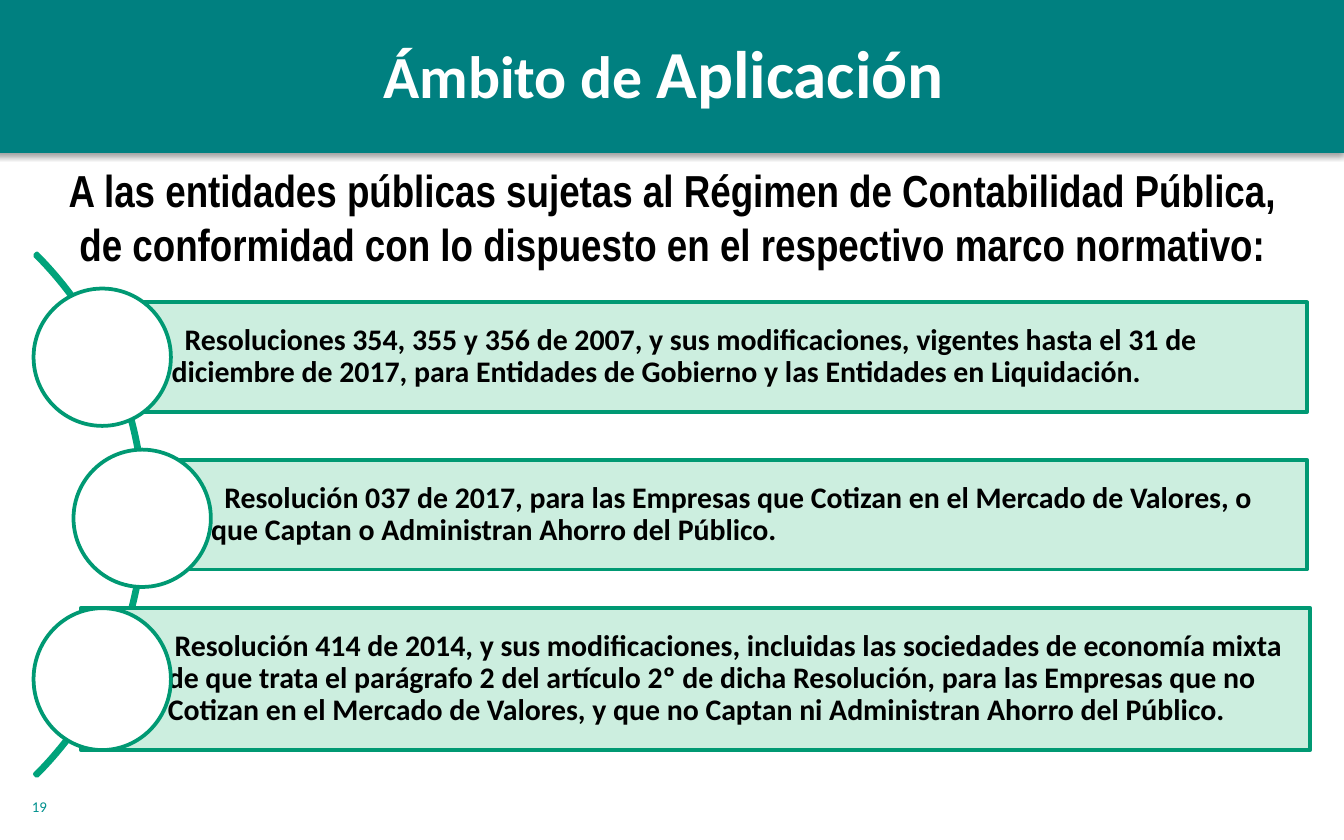
from lxml import etree
from pptx import Presentation
from pptx.dml.color import RGBColor
from pptx.enum.shapes import MSO_SHAPE
from pptx.enum.text import MSO_ANCHOR, PP_ALIGN
from pptx.oxml import parse_xml
from pptx.util import Pt

COLORS = {
    "header": "008080", "number": "00918E", "arc": "00A37B", "outline": "009973",
    "bar": "CCEEDF", "white": "FFFFFF", "black": "000000",
}
A_NS = "http://schemas.openxmlformats.org/drawingml/2006/main"

deck = Presentation()
deck.slide_width, deck.slide_height = Pt(720), Pt(450)
slide = deck.slides.add_slide(deck.slide_layouts[6])


def add_figure(preset, box, fill=None, line=None):
    """Add a shadowless preset shape; box is left, top, width, height in points."""
    figure = slide.shapes.add_shape(preset, *[Pt(length) for length in box])
    figure.shadow.inherit = False
    if fill:
        figure.fill.solid()
        figure.fill.fore_color.rgb = RGBColor.from_string(COLORS[fill])
    else:
        figure.fill.background()
    if line:
        figure.line.color.rgb = RGBColor.from_string(COLORS[line])
        figure.line.width = Pt(2)
    else:
        figure.line.fill.background()
    return figure


def write(frame, runs, font, color, bold=True, align=PP_ALIGN.LEFT, anchor=MSO_ANCHOR.TOP):
    """Fill a text frame with one paragraph of (text, size) runs."""
    frame.word_wrap = True
    frame.vertical_anchor = anchor
    paragraph = frame.paragraphs[0]
    paragraph.alignment = align
    for text, size in runs:
        run = paragraph.add_run()
        run.text = text
        run.font.name, run.font.size, run.font.bold = font, Pt(size), bold
        run.font.color.rgb = RGBColor.from_string(COLORS[color])
    return paragraph


# Header band with a soft shadow below
header = add_figure(MSO_SHAPE.RECTANGLE, (-3, -1.5, 723, 83.5), "header")
effects = header._element.spPr.find(f"{{{A_NS}}}effectLst")
effects.append(parse_xml(
    f'<a:outerShdw xmlns:a="{A_NS}" blurRad="{Pt(3.1)}" dist="{Pt(1.6)}" dir="5400000" '
    'rotWithShape="0"><a:srgbClr val="000000"><a:alpha val="38000"/></a:srgbClr></a:outerShdw>'))

page_number = slide.shapes.add_textbox(Pt(10), Pt(424), Pt(150), Pt(21.6))
write(page_number.text_frame, [("19", 8)], "Calibri", "number", bold=False)

title = slide.shapes.add_textbox(Pt(11.5), Pt(9.4), Pt(688), Pt(57.6))
write(title.text_frame, [("Ámbito de ", 32), ("Aplicación", 36)], "Calibri", "white",
      align=PP_ALIGN.CENTER, anchor=MSO_ANCHOR.MIDDLE)

scope = slide.shapes.add_textbox(Pt(20), Pt(83.5), Pt(680.4), Pt(65.5))
write(scope.text_frame, [(
    "A las entidades públicas sujetas al Régimen de Contabilidad Pública, "
    "de conformidad con lo dispuesto en el respectivo marco normativo:", 24)],
    "Arial Narrow", "black", align=PP_ALIGN.CENTER)

# Arc from 315 to 45 degrees, mostly off the left edge
arc = add_figure(MSO_SHAPE.BLOCK_ARC, (-318.2, 77.8, 396, 396), line="arc")
for index, value in enumerate((189, 27, 0.004)):
    arc.adjustments[index] = value

# Bar box, circle box, first-line indent, text
resolutions = [
    ((45.2, 162, 655, 58.8), (18, 154.6, 73.6, 73.6), 7,
     "Resoluciones 354, 355 y 356 de 2007, y sus modificaciones, vigentes hasta el 31 de "
     "diciembre de 2017, para Entidades de Gobierno y las Entidades en Liquidación."),
    ((66.5, 246.3, 633.7, 58.8), (39.4, 240.9, 73.6, 73.6), 7,
     "Resolución 037 de 2017, para las Empresas que Cotizan en el Mercado de Valores, o "
     "que Captan o Administran Ahorro del Público."),
    ((43.2, 325.8, 658.8, 76), (18, 325.8, 73.6, 76), 3.6,
     "Resolución 414 de 2014, y sus modificaciones, incluidas las sociedades de economía mixta "
     "de que trata el parágrafo 2 del artículo 2º de dicha Resolución, para las Empresas que no "
     "Cotizan en el Mercado de Valores, y que no Captan ni Administran Ahorro del Público."),
]
for bar_box, circle_box, indent, text in resolutions:
    bar = add_figure(MSO_SHAPE.RECTANGLE, bar_box, "bar", "outline")
    frame = bar.text_frame
    frame.margin_left = Pt(46.7)
    frame.margin_right = frame.margin_top = frame.margin_bottom = Pt(3)
    paragraph = write(frame, [(text, 16)], "Calibri", "black", anchor=MSO_ANCHOR.MIDDLE)
    paragraph.line_spacing = 0.9
    paragraph._p.get_or_add_pPr().set("indent", str(Pt(indent)))
    add_figure(MSO_SHAPE.OVAL, circle_box, "white", "outline")

deck.save("out.pptx")
